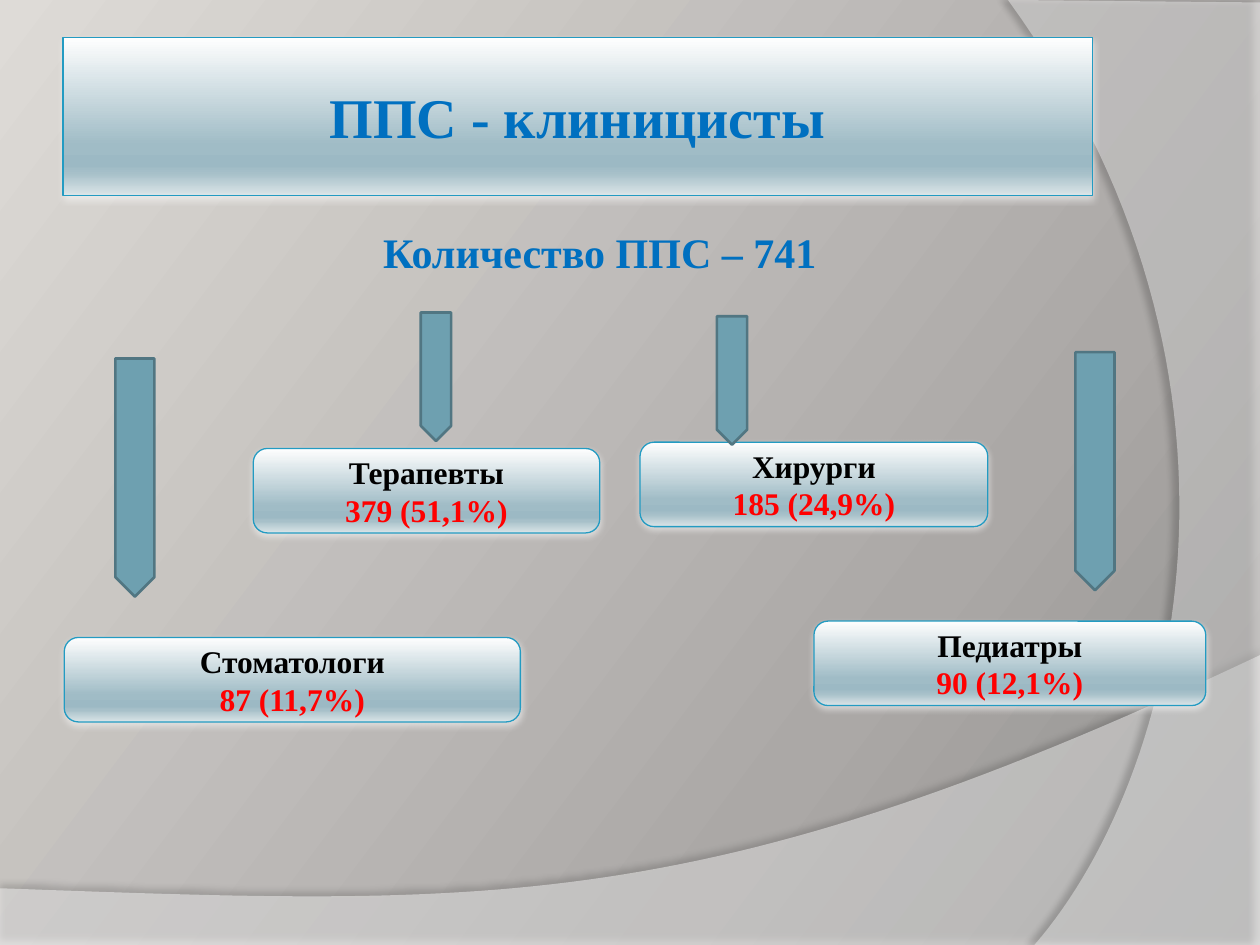
from lxml.etree import SubElement
from pptx import Presentation
from pptx.dml.color import RGBColor
from pptx.enum.shapes import MSO_SHAPE
from pptx.enum.text import MSO_ANCHOR, PP_ALIGN
from pptx.oxml.ns import qn
from pptx.util import Inches, Pt

FONT = "Times New Roman"
BLUE, RED, BLACK, WHITE = "0070C0", "FF0000", "000000", "FFFFFF"
ARROW_FILL, ARROW_LINE, BOX_LINE = "6EA0B0", "517682", "239BC2"
BACKDROP = [(0, "8F8D8B"), (30, "ABA8A6"), (100, "DEDBD7")]
GLASS = [(0, "FEFEFE"), (68, "A0BCC6"), (81, "9CB9C4"), (86, "A7C0C9"), (100, "DAE4E7")]


def rgb(color):
    return RGBColor.from_string(color)


def set_gradient(fill, element, stops, angle):
    """Fill with (percent, colour) stops; the angle runs clockwise."""
    fill.gradient()
    fill.gradient_angle = 360 - angle
    gs_list = next(element.iter(qn("a:gsLst")))
    gs_list.clear()
    for percent, color in stops:
        gs = SubElement(gs_list, qn("a:gs"), pos=str(percent * 1000))
        SubElement(gs, qn("a:srgbClr"), val=color)


def set_shadow(sp, color, alpha, blur, distance, angle):
    sp.shadow.inherit = False
    effects = next(sp.element.iter(qn("a:effectLst")))
    shadow = SubElement(effects, qn("a:outerShdw"), blurRad=str(int(Pt(blur))),
                        dist=str(int(Pt(distance))), dir=str(angle * 60000), rotWithShape="0")
    clr = SubElement(shadow, qn("a:srgbClr"), val=color)
    SubElement(clr, qn("a:alpha"), val=str(alpha * 1000))


def bezier(p0, p1, p2, p3, steps=60):
    """Points along a cubic curve, without its start."""
    points = []
    for i in range(1, steps + 1):
        t = i / steps
        weights = (1 - t) ** 3, 3 * t * (1 - t) ** 2, 3 * t * t * (1 - t), t ** 3
        points.append(tuple(sum(w * p[k] for w, p in zip(weights, (p0, p1, p2, p3)))
                            for k in (0, 1)))
    return points


class Deck:
    """Style and current slide; lengths are units of a 100 x 75 grid."""

    def __init__(self):
        self.prs = Presentation()
        self.prs.slide_width, self.prs.slide_height = Inches(10), Inches(7.5)
        self.unit = self.prs.slide_width / 100
        self.s = self.prs.slides.add_slide(self.prs.slide_layouts[6])
        set_gradient(self.s.background.fill, self.s.element, BACKDROP, 217)

    def grid(self, *lengths):
        return [round(n * self.unit) for n in lengths]

    def wave(self, points, alpha, shadow):
        start, *rest = [self.grid(*p) for p in points]
        builder = self.s.shapes.build_freeform(*start)
        builder.add_line_segments(rest)
        sp = builder.convert_to_shape()
        sp.fill.solid()
        sp.fill.fore_color.rgb = rgb(WHITE)
        clr = sp.element.spPr.find(qn("a:solidFill"))[0]
        SubElement(clr, qn("a:alpha"), val=str(alpha * 1000))
        sp.line.fill.background()
        set_shadow(sp, BLACK, *shadow)

    def set_lines(self, tf, lines):
        """Centre bold lines given as (text, size, colour)."""
        tf.word_wrap = True
        for i, (text, size, color) in enumerate(lines):
            p = tf.add_paragraph() if i else tf.paragraphs[0]
            p.text = text
            p.alignment = PP_ALIGN.CENTER
            p.font.name, p.font.size, p.font.bold = FONT, Pt(size), True
            p.font.color.rgb = rgb(color)

    def box(self, kind, left, top, width, height, lines):
        sp = self.s.shapes.add_shape(kind, *self.grid(left, top, width, height))
        set_gradient(sp.fill, sp.element.spPr, GLASS, 90)
        sp.line.color.rgb, sp.line.width = rgb(BOX_LINE), Pt(0.75)
        set_shadow(sp, WHITE, 55, 4, 1.5, 90)
        sp.text_frame.vertical_anchor = MSO_ANCHOR.MIDDLE
        self.set_lines(sp.text_frame, lines)

    def text(self, left, top, width, height, lines):
        tf = self.s.shapes.add_textbox(*self.grid(left, top, width, height)).text_frame
        self.set_lines(tf, lines)
        tf.margin_left = Inches(0.45)
        tf.paragraphs[0].space_before = Pt(2)

    def down_arrow(self, x, y, length, thickness):
        """Pentagon turned to point down, centred on x, y."""
        sp = self.s.shapes.add_shape(MSO_SHAPE.PENTAGON, *self.grid(
            x - length / 2, y - thickness / 2, length, thickness))
        sp.rotation = 90
        sp.fill.solid()
        sp.fill.fore_color.rgb = rgb(ARROW_FILL)
        sp.line.color.rgb, sp.line.width = rgb(ARROW_LINE), Pt(1.5)
        sp.shadow.inherit = False


def main():
    deck = Deck()
    deck.wave([(0, 70.5), (0, 75), (100, 75), (100, 52),
               *bezier((100, 52), (55.9, 72.9), (39.1, 71.9), (0, 70.5))],
              45, (35, 4, 3.5, 270))
    deck.wave([(100, 0.2), (100, 75), (82.1, 75),
               *bezier((82.1, 75), (93.5, 61.9), (101.8, 30), (80, 0))],
              40, (45, 4, 4, 180))

    deck.box(MSO_SHAPE.RECTANGLE, 5, 3, 81.7, 12.5, [("ППС - клиницисты", 32, BLUE)])
    deck.text(5, 17.5, 81.7, 49.5, [("Количество ППС – 741", 24, BLUE)])

    for name, count, left, top, width in [
        ("Терапевты", "379 (51,1%)", 20.1, 35.6, 27.5),
        ("Хирурги", "185 (24,9%)", 50.8, 35.1, 27.6),
        ("Педиатры", "90 (12,1%)", 64.6, 49.3, 31.1),
        ("Стоматологи", "87 (11,7%)", 5.1, 50.6, 36.2),
    ]:
        deck.box(MSO_SHAPE.FLOWCHART_ALTERNATE_PROCESS, left, top, width, 6.7,
                 [(name, 18, BLACK), (count, 18, RED)])

    long_arrow, short_arrow = (18.9, 3.1), (10.2, 2.4)
    for x, y, size in [(10.7, 37.9, long_arrow), (34.6, 29.9, short_arrow),
                       (58.1, 30.2, short_arrow), (86.9, 37.4, long_arrow)]:
        deck.down_arrow(x, y, *size)
    deck.prs.save("out.pptx")


if __name__ == "__main__":
    main()
